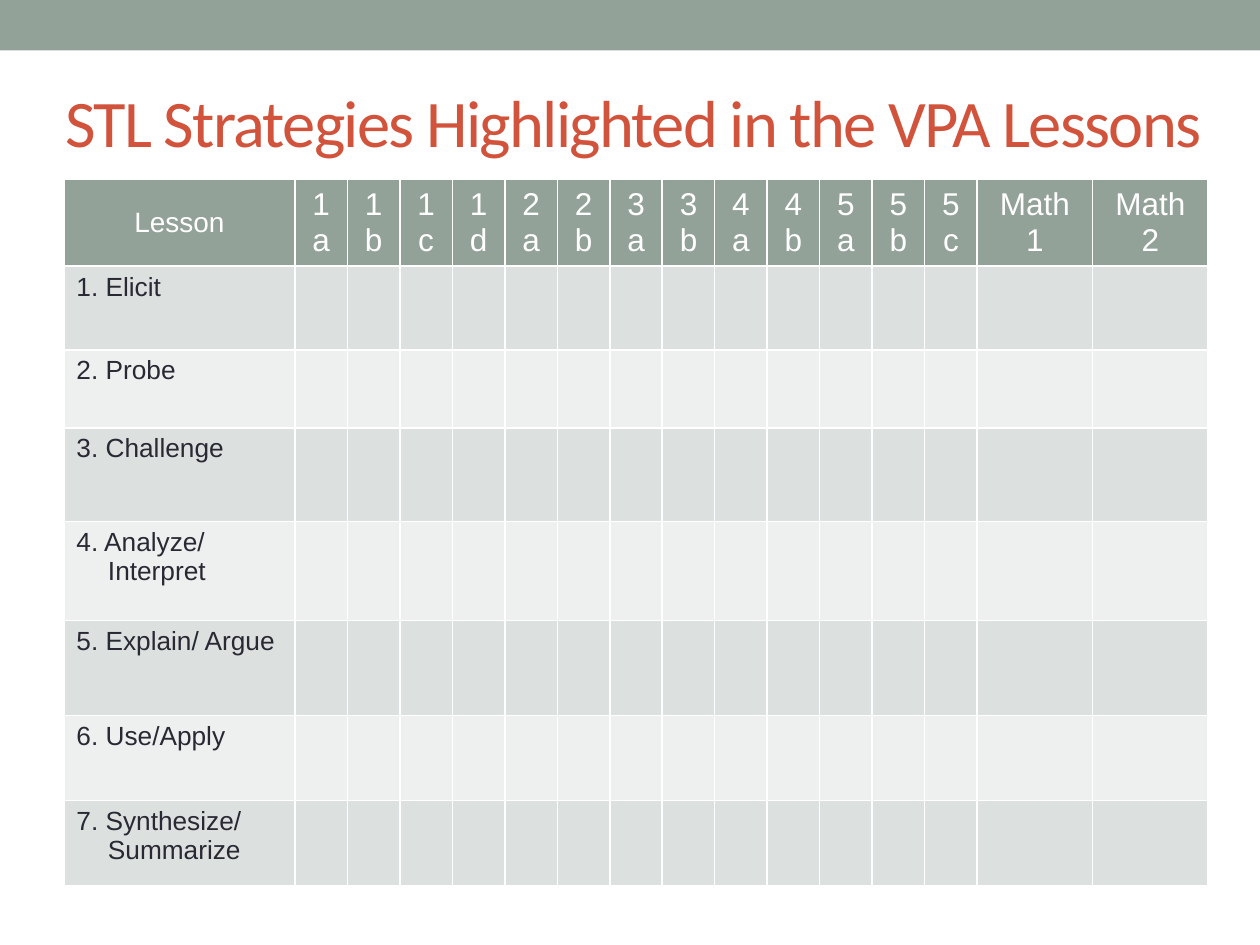
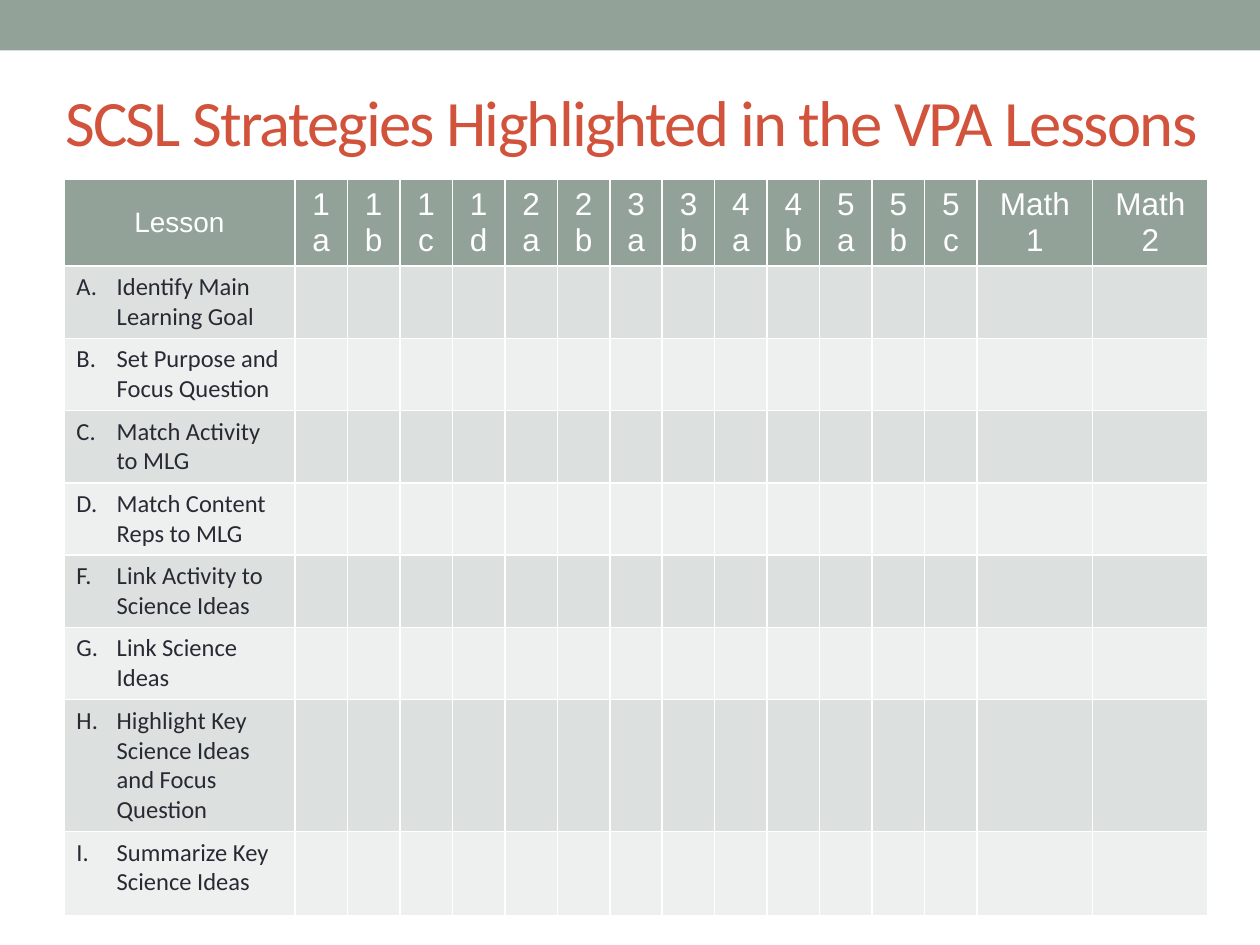
"""Build two lesson-by-strategy grid slides with a shared band, title style and table layout."""
from pptx import Presentation
from pptx.dml.color import RGBColor
from pptx.enum.shapes import MSO_SHAPE
from pptx.enum.text import MSO_ANCHOR, MSO_AUTO_SIZE, PP_ALIGN
from pptx.util import Pt

RECT = MSO_SHAPE.RECTANGLE
MIDDLE = MSO_ANCHOR.MIDDLE
NO_FIT = MSO_AUTO_SIZE.NONE
LEFT, CENTER = PP_ALIGN.LEFT, PP_ALIGN.CENTER

SAGE, BRICK, INK, WHITE = "93A299", "D2533C", "292934", "FFFFFF"
ROW_FILLS = ["DCE0DE", "EEF0EF"]
LESSONS = ["1a", "1b", "1c", "1d", "2a", "2b", "3a", "3b", "4a", "4b",
           "5a", "5b", "5c", "Math 1", "Math 2"]
HEADERS = ["Lesson"] + LESSONS
COL_WIDTHS = [132] + [30] * 13 + [66] * 2
HEADER_HEIGHT = 49.5

SLIDES = [
    {
        "title": "STL Strategies Highlighted in the VPA Lessons",
        "title_size": 38, "font": "Arial", "size": 15, "indent": 18, "after": 12,
        "rows": [("1. Elicit", 48), ("2. Probe", 44.5), ("3. Challenge", 53.5),
                 ("4. Analyze/ Interpret", 56.5), ("5. Explain/ Argue", 54.5),
                 ("6. Use/Apply", 48.5), ("7. Synthesize/\vSummarize", 48.5)],
    },
    {
        "title": "SCSL Strategies Highlighted in the VPA Lessons",
        "title_size": 37, "font": "Calibri", "size": 14, "indent": 23, "after": 0,
        "rows": [("A.\tIdentify Main Learning Goal", 41),
                 ("B.\tSet Purpose and Focus Question", 41),
                 ("C.\tMatch Activity to MLG", 41),
                 ("D.\tMatch Content Reps to MLG", 41),
                 ("F.\tLink Activity to Science Ideas", 41),
                 ("G.\tLink Science Ideas", 41),
                 ("H.\tHighlight Key Science Ideas and Focus Question", 75),
                 ("I.\tSummarize Key Science Ideas", 48)],
    },
]


def fill(target, color):
    target.fill.solid()
    target.fill.fore_color.rgb = RGBColor.from_string(color)


def style(p, font, size, color, align=LEFT):
    p.alignment = align
    p.font.name = font
    p.font.size = Pt(size)
    p.font.bold = False
    p.font.color.rgb = RGBColor.from_string(color)


prs = Presentation()
prs.slide_width, prs.slide_height = Pt(720), Pt(540)
layout = prs.slide_layouts[5]

for number, content in enumerate(SLIDES):
    s = prs.slides.add_slide(layout)
    if number == 0:
        band = s.shapes.add_shape(RECT, 0, 0, prs.slide_width, Pt(28.8))
        band.shadow.inherit = False
        fill(band, SAGE)
        band.line.fill.background()
        prs.slide_master.element.cSld.spTree.insert(2, band.element)

    title = s.shapes.title
    title.left, title.top, title.width, title.height = Pt(30), Pt(30), Pt(672), Pt(78)
    tf = title.text_frame
    tf.auto_size = NO_FIT
    tf.vertical_anchor = MIDDLE
    tf.text = content["title"]
    p = tf.paragraphs[0]
    style(p, "Calibri", content["title_size"], BRICK)
    p.runs[0].font._element.set("spc", "-100")

    heights = [HEADER_HEIGHT] + [height for _, height in content["rows"]]
    table = s.shapes.add_table(len(heights), len(HEADERS), Pt(36.5), Pt(102.5),
                               Pt(sum(COL_WIDTHS)), Pt(sum(heights))).table
    for column, width in zip(table.columns, COL_WIDTHS):
        column.width = Pt(width)
    for row, height in zip(table.rows, heights):
        row.height = Pt(height)

    for c, header in enumerate(HEADERS):
        cell = table.cell(0, c)
        fill(cell, SAGE)
        cell.vertical_anchor = MIDDLE
        cell.text = header
        p = cell.text_frame.paragraphs[0]
        style(p, "Arial", 18 if c else 16, WHITE, CENTER)
        p.space_before = Pt(12)

    for r, (strategy, _) in enumerate(content["rows"], start=1):
        for c in range(len(HEADERS)):
            fill(table.cell(r, c), ROW_FILLS[(r - 1) % 2])
        cell = table.cell(r, 0)
        cell.text = strategy
        p = cell.text_frame.paragraphs[0]
        style(p, content["font"], content["size"], INK)
        p.space_after = Pt(content["after"])
        pPr = p._p.get_or_add_pPr()
        pPr.set("marL", str(Pt(content["indent"])))
        pPr.set("indent", str(-Pt(content["indent"])))

prs.save("out.pptx")
